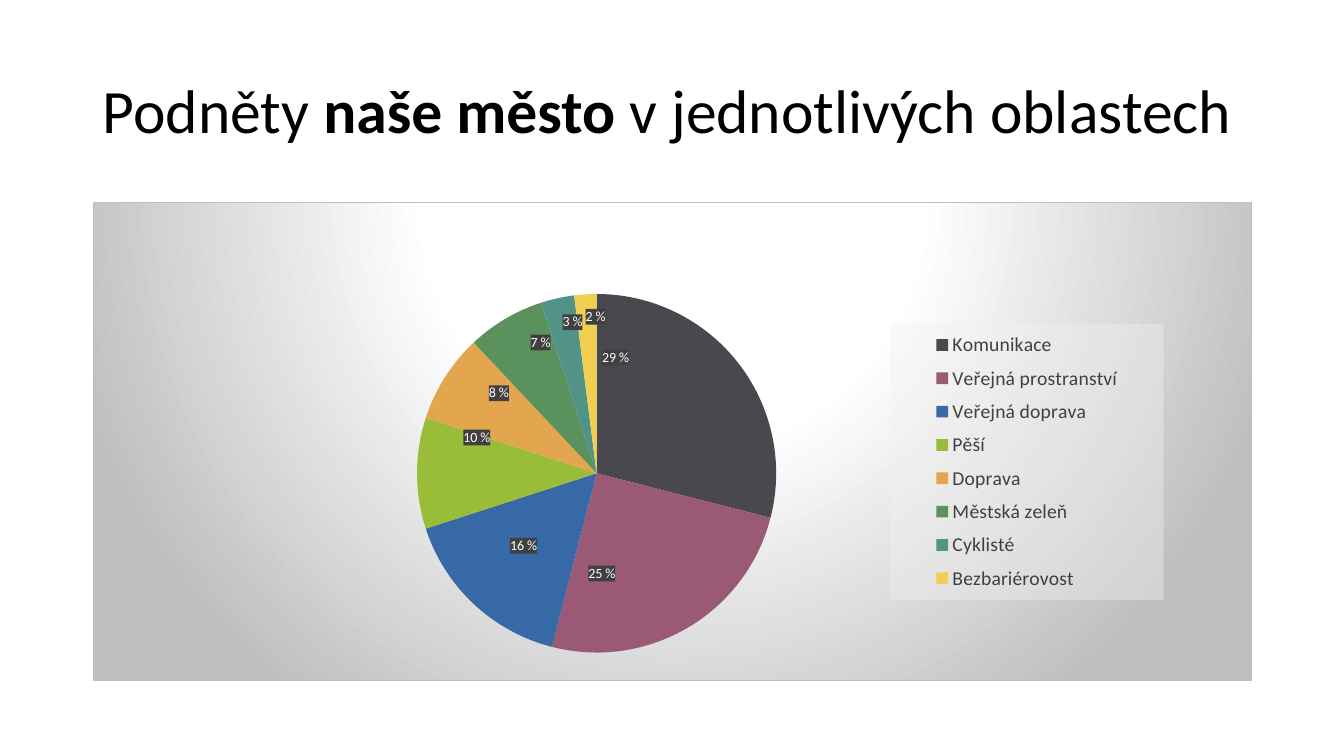
from copy import deepcopy

from pptx import Presentation
from pptx.chart.data import CategoryChartData
from pptx.dml.color import RGBColor
from pptx.enum.chart import XL_CHART_TYPE, XL_LABEL_POSITION, XL_LEGEND_POSITION
from pptx.enum.text import MSO_ANCHOR
from pptx.oxml import parse_xml
from pptx.oxml.ns import nsdecls, qn
from pptx.util import Inches, Pt

PIE = XL_CHART_TYPE.PIE
CENTER = XL_LABEL_POSITION.CENTER
RIGHT = XL_LEGEND_POSITION.RIGHT
MIDDLE = MSO_ANCHOR.MIDDLE
FONT = "Calibri"
NS = nsdecls("c", "a")
COLORS = {"text": "000000", "legend": "404040", "label": "FFFFFF", "label_fill": "404040",
          "light": "FFFFFF", "edge": "BFBFBF", "legend_fill": "F2F2F2"}
AREAS = [
    ("Komunikace", 29, "49484F", (-4.5, -12.7)),
    ("Veřejná prostranství", 25, "9A5974", (-3.5, 4.8)),
    ("Veřejná doprava", 16, "3869A7", (-1, 1.5)),
    ("Pěší", 10, "99BC39", (-2.6, -7.5)),
    ("Doprava", 8, "E3A64E", (-1.9, -6.7)),
    ("Městská zeleň", 7, "5A915C", (-0.9, -11.2)),
    ("Cyklisté", 3, "519487", (-0.4, -13.3)),
    ("Bezbariérovost", 2, "F3CF51", (0.4, -14)),
]


def style(font, size, color):
    for key, value in {"name": FONT, "size": Pt(size), "bold": False}.items():
        setattr(font, key, value)
    font.color.rgb = RGBColor.from_string(COLORS[color])


def layout(target, **shares):
    inner = f'<c:layoutTarget val="{target}"/>' if target else ""
    if "w" in shares:
        inner += '<c:xMode val="edge"/><c:yMode val="edge"/>'
    inner += "".join(f'<c:{k} val="{v / 100:.3f}"/>' for k, v in shares.items())
    return parse_xml(f"<c:layout {NS}><c:manualLayout>{inner}</c:manualLayout></c:layout>")


prs = Presentation()
prs.slide_width, prs.slide_height = Inches(13.33), Inches(7.5)
s = prs.slides.add_slide(prs.slide_layouts[6])
left, width = Inches(0.92), Inches(11.5)

tf = s.shapes.add_textbox(left, Inches(0.4), width, Inches(1.45)).text_frame
tf.word_wrap = True
tf.vertical_anchor = MIDDLE
p = tf.paragraphs[0]
p.line_spacing = 0.9
for text, bold in (("Podněty ", False), ("naše město", True), (" v jednotlivých oblastech", False)):
    r = p.add_run()
    r.text = text
    style(r.font, 44, "text")
    r.font.bold = bold

data = CategoryChartData()
data.categories = [name for name, *_ in AREAS]
data.add_series("Series 1", [value for _, value, *_ in AREAS])
chart = s.shapes.add_chart(PIE, left, Inches(2), width, Inches(4.76), data).chart
chart.has_title = False
style(chart.font, 10, "text")
root = chart._chartSpace

root.find(qn("c:chart")).addnext(parse_xml(
    f'<c:spPr {NS}><a:gradFill><a:gsLst>'
    f'<a:gs pos="0"><a:srgbClr val="{COLORS["light"]}"/></a:gs>'
    f'<a:gs pos="39000"><a:srgbClr val="{COLORS["light"]}"/></a:gs>'
    f'<a:gs pos="100000"><a:srgbClr val="{COLORS["edge"]}"/></a:gs></a:gsLst>'
    '<a:path path="circle"><a:fillToRect l="50000" t="-80000" r="50000" b="180000"/></a:path>'
    f'</a:gradFill><a:ln w="9525"><a:solidFill><a:srgbClr val="{COLORS["edge"]}"/>'
    '</a:solidFill></a:ln></c:spPr>'))

area = root.xpath("c:chart/c:plotArea")[0]
for old in area.findall(qn("c:layout")):
    area.remove(old)
area.insert(0, layout("inner", x=7.6, y=19.2, w=71.7, h=74.9))

chart.has_legend = True
legend = chart.legend
legend.position = RIGHT
legend.include_in_layout = False
style(legend.font, 14, "legend")
overlay = root.xpath("c:chart/c:legend/c:overlay")[0]
overlay.addprevious(layout(None, x=68.8, y=25.4, w=23.6, h=57.7))
overlay.addnext(parse_xml(
    f'<c:spPr {NS}><a:solidFill><a:srgbClr val="{COLORS["legend_fill"]}">'
    '<a:alpha val="39000"/></a:srgbClr></a:solidFill></c:spPr>'))

plot = chart.plots[0]
plot.vary_by_categories = True
ser = plot.series[0]
labels = ser.data_labels
for key, value in {"show_percentage": True, "show_value": False, "number_format": "0 %",
                   "number_format_is_linked": False, "position": CENTER}.items():
    setattr(labels, key, value)
style(labels.font, 10, "label")
group = labels._element
group.find(qn("c:numFmt")).addnext(parse_xml(
    f'<c:spPr {NS}><a:solidFill><a:srgbClr val="{COLORS["label_fill"]}">'
    '<a:alpha val="90000"/></a:srgbClr></a:solidFill></c:spPr>'))
shared = [el for el in group if el.tag != qn("c:showLeaderLines")]

for i, (_, _, color, (dx, dy)) in enumerate(AREAS):
    fill = ser.points[i].format.fill
    fill.solid()
    fill.fore_color.rgb = RGBColor.from_string(color)
    label = parse_xml(f'<c:dLbl {NS}><c:idx val="{i}"/></c:dLbl>')
    label.append(layout(None, x=dx, y=dy))
    label.extend(deepcopy(shared))
    group.insert(i, label)

prs.save("out.pptx")
